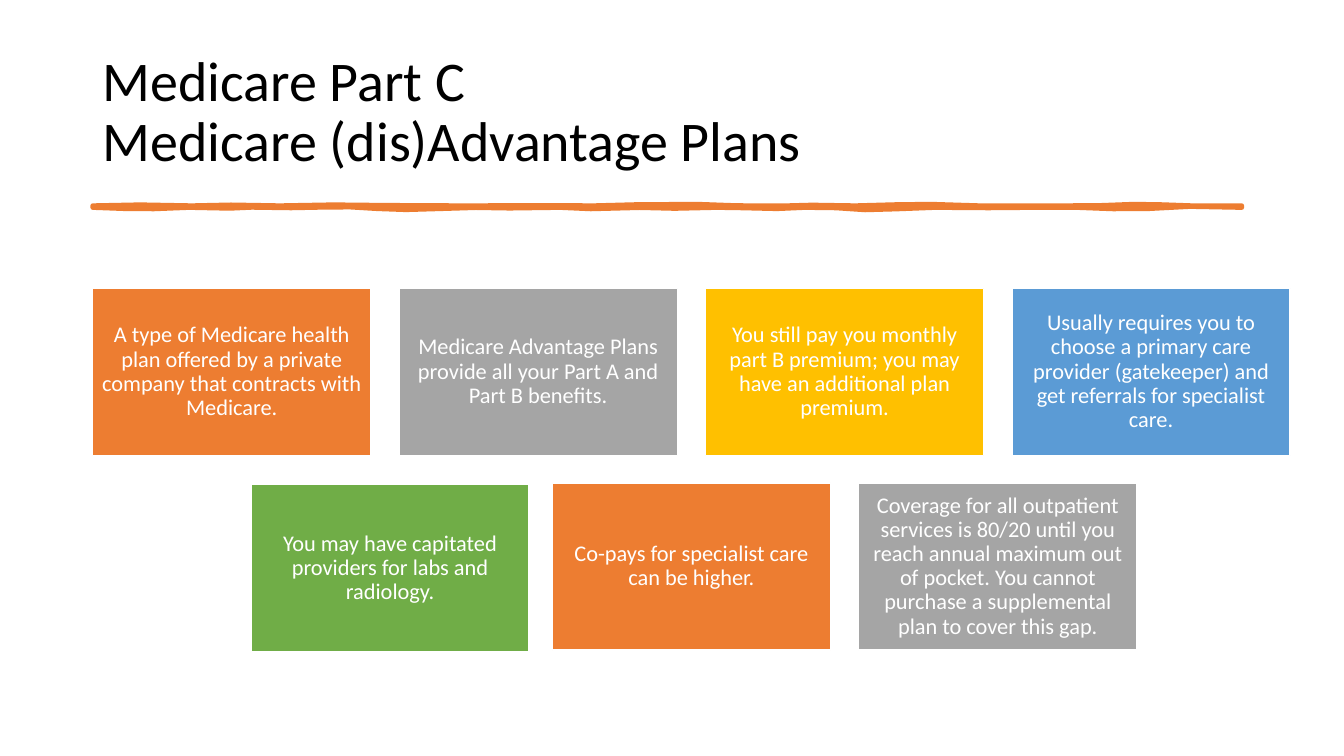
from dataclasses import dataclass

from pptx import Presentation
from pptx.dml.color import RGBColor
from pptx.enum.shapes import MSO_SHAPE
from pptx.enum.text import MSO_ANCHOR, MSO_AUTO_SIZE, PP_ALIGN
from pptx.util import Pt


@dataclass(frozen=True)
class Theme:
    font: str = "Calibri"
    head: float = 40
    body: float = 16
    black: str = "000000"
    white: str = "FFFFFF"
    orange: str = "ED7D31"
    gray: str = "A5A5A5"
    gold: str = "FFC000"
    blue: str = "5B9BD5"
    green: str = "70AD47"


THEME = Theme()
LEFT, PITCH = 66.24, 218.88
WIDE, TALL = 198.72, 119.52
UPPER, LOWER = 205.92, 344.88

CARDS = [
    (LEFT, UPPER, THEME.orange,
     "A type of Medicare health plan offered by a private company that contracts with Medicare."),
    (LEFT + PITCH, UPPER, THEME.gray,
     "Medicare Advantage Plans provide all your Part A and Part B benefits."),
    (LEFT + 2 * PITCH, UPPER, THEME.gold,
     "You still pay you monthly part B premium; you may have an additional plan premium."),
    (LEFT + 3 * PITCH, UPPER, THEME.blue,
     "Usually requires you to choose a primary care provider (gatekeeper) and get referrals for specialist care."),
    (179.28, LOWER + 1.44, THEME.green,
     "You may have capitated providers for labs and radiology."),
    (394.56, LOWER, THEME.orange,
     "Co-pays for specialist care can be higher."),
    (394.56 + PITCH, LOWER, THEME.gray,
     "Coverage for all outpatient services is 80/20 until you reach annual maximum out of pocket. "
     "You cannot purchase a supplemental plan to cover this gap."),
]

CREST = [
    (66.24, 146.9), (100, 146.2), (137, 146.9), (165, 146.3), (200, 146.9),
    (238, 146.2), (276, 146.6), (331, 146.9), (395, 146.7), (424, 146.9),
    (454, 146.1), (498, 145.8), (526, 146.8), (558, 147), (580, 146.4),
    (611, 146.9), (640, 146.1), (665, 145.8), (700, 146.9), (737, 146.9),
    (783, 146.8), (810, 145.8), (829, 146.1), (855, 147), (887.04, 146.9),
]
TROUGH = [
    (887.04, 148.3), (850, 147.6), (820, 149.2), (795, 149.3), (769, 148.3),
    (739, 148.3), (706, 148.6), (668, 148.3), (640, 149.4), (618, 150),
    (597, 148.6), (575, 148.3), (555, 149.2), (530, 148.6), (512, 148.3),
    (482, 149), (457, 148.4), (422, 149.3), (400, 148.3), (364, 148.8),
    (340, 148.4), (317, 149.1), (290, 149.9), (270, 149.2), (250, 148),
    (228, 148.2), (208, 148.6), (180, 148.2), (164, 148.9), (135, 148.3),
    (110, 149.3), (90, 149.2), (66.24, 148.3),
]


def put(item, attrs):
    for name, value in attrs.items():
        setattr(item, name, value)


def place(item, left, top, width, height):
    put(item, {"left": Pt(left), "top": Pt(top), "width": Pt(width), "height": Pt(height)})


def paint(shape, fill, line, weight):
    shape.shadow.inherit = False
    shape.fill.solid()
    shape.fill.fore_color.rgb = RGBColor.from_string(fill)
    shape.line.color.rgb = RGBColor.from_string(line)
    shape.line.width = Pt(weight)


def write(frame, text, size, color, align, inset):
    frame.text = text
    put(frame, {
        "word_wrap": True,
        "auto_size": MSO_AUTO_SIZE.NONE,
        "vertical_anchor": MSO_ANCHOR.MIDDLE,
        **{"margin_" + side: Pt(gap) for side, gap in inset.items()},
    })
    para = frame.paragraphs[0]
    put(para, {"alignment": align, "line_spacing": 0.9})
    for run in para.runs:
        put(run.font, {"name": THEME.font, "size": Pt(size), "bold": False})
        run.font.color.rgb = RGBColor.from_string(color)


def add_title(slide, text):
    title = slide.shapes.title
    place(title, LEFT, 28.8, 828, 104.4)
    inset = {"left": 7.2, "right": 7.2, "top": 3.6, "bottom": 3.6}
    write(title.text_frame, text, THEME.head, THEME.black, PP_ALIGN.LEFT, inset)


def add_stroke(slide):
    points = [(Pt(x), Pt(y)) for x, y in CREST + TROUGH]
    pen = slide.shapes.build_freeform(*points[0])
    pen.add_line_segments(points[1:], close=True)
    paint(pen.convert_to_shape(), THEME.orange, THEME.orange, 3.25)


def add_card(slide, left, top, color, text):
    card = slide.shapes.add_shape(MSO_SHAPE.RECTANGLE, Pt(left), Pt(top), Pt(WIDE), Pt(TALL))
    paint(card, color, THEME.white, 1)
    inset = dict.fromkeys(("left", "right", "top", "bottom"), 5.04)
    write(card.text_frame, text, THEME.body, THEME.white, PP_ALIGN.CENTER, inset)


def main():
    deck = Presentation()
    put(deck, {"slide_width": Pt(960), "slide_height": Pt(540)})
    slide = deck.slides.add_slide(deck.slide_layouts[5])
    add_title(slide, "Medicare Part C\vMedicare (dis)Advantage Plans")
    add_stroke(slide)
    for card in CARDS:
        add_card(slide, *card)
    deck.save("out.pptx")


if __name__ == "__main__":
    main()
